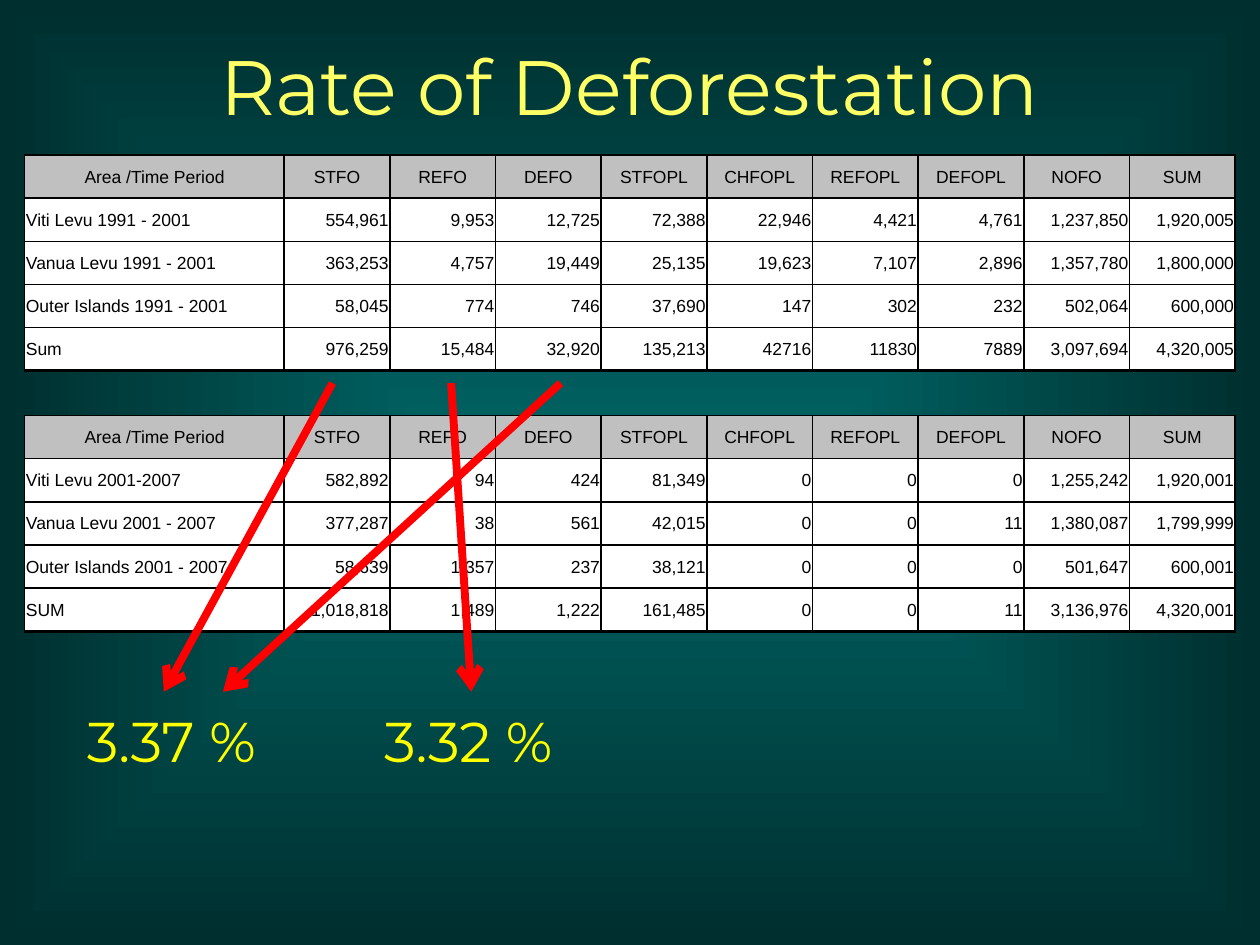
from lxml import etree
from pptx import Presentation
from pptx.dml.color import RGBColor
from pptx.enum.shapes import MSO_CONNECTOR
from pptx.enum.text import MSO_ANCHOR, MSO_AUTO_SIZE, PP_ALIGN
from pptx.oxml.ns import qn
from pptx.util import Pt

LEFT, CENTER, RIGHT = PP_ALIGN.LEFT, PP_ALIGN.CENTER, PP_ALIGN.RIGHT
TOP, MIDDLE = MSO_ANCHOR.TOP, MSO_ANCHOR.MIDDLE
STRAIGHT = MSO_CONNECTOR.STRAIGHT
FIT_SHAPE = MSO_AUTO_SIZE.SHAPE_TO_FIT_TEXT

COLORS = {
    "glow": "006666", "edge": "002F2F", "title": "FFFF66", "rate": "FFFF00",
    "arrow": "FF0000", "header": "C0C0C0", "body": "FFFFFF", "ink": "000000",
}
HEADER = ["Area /Time Period", "STFO", "REFO", "DEFO", "STFOPL", "CHFOPL",
          "REFOPL", "DEFOPL", "NOFO", "SUM"]
FIRST_PERIOD = [
    ["Viti Levu 1991 - 2001", "554,961", "9,953", "12,725", "72,388", "22,946",
     "4,421", "4,761", "1,237,850", "1,920,005"],
    ["Vanua Levu 1991 - 2001", "363,253", "4,757", "19,449", "25,135", "19,623",
     "7,107", "2,896", "1,357,780", "1,800,000"],
    ["Outer Islands 1991 - 2001", "58,045", "774", "746", "37,690", "147",
     "302", "232", "502,064", "600,000"],
    ["Sum", "976,259", "15,484", "32,920", "135,213", "42716",
     "11830", "7889", "3,097,694", "4,320,005"],
]
SECOND_PERIOD = [
    ["Viti Levu 2001-2007", "582,892", "94", "424", "81,349", "0",
     "0", "0", "1,255,242", "1,920,001"],
    ["Vanua Levu 2001 - 2007", "377,287", "38", "561", "42,015", "0",
     "0", "11", "1,380,087", "1,799,999"],
    ["Outer Islands 2001 - 2007", "58,639", "1,357", "237", "38,121", "0",
     "0", "0", "501,647", "600,001"],
    ["SUM", "1,018,818", "1,489", "1,222", "161,485", "0",
     "0", "11", "3,136,976", "4,320,001"],
]
GAP = [""] * len(HEADER)
ROWS = [HEADER, *FIRST_PERIOD, GAP, HEADER, *SECOND_PERIOD]
LABEL_WIDTH, VALUE_WIDTH = 148.3, 60.4
ROW_HEIGHT, GAP_HEIGHT = 24.65, 25.7


class SlideBuilder:
    """Keeps the style and the slide being filled."""

    heading_font = "Montserrat"
    table_font = "Arial"
    cell_margins = {"margin_left": Pt(0.75), "margin_right": Pt(0.75),
                    "margin_top": Pt(0.75), "margin_bottom": Pt(0),
                    "vertical_anchor": MIDDLE}

    def __init__(self, slide):
        self.slide = slide

    def color(self, name):
        return RGBColor.from_string(COLORS[name])

    def background(self, inner, outer):
        fill = self.slide.background.fill
        fill.gradient()
        for stop, name, position in zip(fill.gradient_stops, (inner, outer), (0, 1)):
            stop.color.rgb = self.color(name)
            stop.position = position
        gradient = self.slide.element.xpath(".//a:gradFill")[0]
        for linear in gradient.findall(qn("a:lin")):
            gradient.remove(linear)
        shading = etree.SubElement(gradient, qn("a:path"), path="shape")
        center = dict.fromkeys("ltrb", "50000")
        etree.SubElement(shading, qn("a:fillToRect"), center)

    def add_words(self, paragraph, text, font, size, color, align):
        paragraph.alignment = align
        run = paragraph.add_run()
        run.text = text
        for name, value in {"name": font, "size": Pt(size)}.items():
            setattr(run.font, name, value)
        run.font.color.rgb = self.color(color)

    def text(self, box, text, size, color, align=LEFT, anchor=TOP, wrap=False):
        frame = self.slide.shapes.add_textbox(*map(Pt, box)).text_frame
        settings = {"word_wrap": wrap, "vertical_anchor": anchor}
        if not wrap:
            settings["auto_size"] = FIT_SHAPE
        for name, value in settings.items():
            setattr(frame, name, value)
        self.add_words(frame.paragraphs[0], text, self.heading_font, size, color, align)

    def borders(self, cell, widths):
        """Draw left, right, top and bottom lines; width 0 means none."""
        properties = cell._tc.get_or_add_tcPr()
        for index, (side, width) in enumerate(zip("LRTB", widths)):
            line = etree.Element(qn(f"a:ln{side}"), w=str(Pt(width)))
            if width:
                solid = etree.SubElement(line, qn("a:solidFill"))
                etree.SubElement(solid, qn("a:srgbClr"), val=COLORS["ink"])
            else:
                etree.SubElement(line, qn("a:noFill"))
            properties.insert(index, line)

    def cell(self, cell, text, fill, align, widths):
        for name, value in self.cell_margins.items():
            setattr(cell, name, value)
        if fill:
            cell.fill.solid()
            cell.fill.fore_color.rgb = self.color(fill)
            self.add_words(cell.text_frame.paragraphs[0], text, self.table_font, 10,
                           "ink", align)
        else:
            cell.fill.background()
        self.borders(cell, widths)

    def table(self, left, top, rows):
        columns = len(rows[0])
        widths = [LABEL_WIDTH] + [VALUE_WIDTH] * (columns - 1)
        heights = [GAP_HEIGHT if row is GAP else ROW_HEIGHT for row in rows]
        box = map(Pt, (left, top, sum(widths), sum(heights)))
        table = self.slide.shapes.add_table(len(rows), columns, *box).table
        table.first_row = table.horz_banding = False
        for column, width in zip(table.columns, widths):
            column.width = Pt(width)
        for row_index, (row, height) in enumerate(zip(rows, heights)):
            table.rows[row_index].height = Pt(height)
            is_sum = row[0].upper() == "SUM"
            lines = (0, 0, 2, 1) if row is GAP else (1, 1, 1, 2 if is_sum else 1)
            fill = {id(GAP): None, id(HEADER): "header"}.get(id(row), "body")
            for column_index, text in enumerate(row):
                align = LEFT if column_index == 0 else RIGHT
                if row is HEADER:
                    align = CENTER
                self.cell(table.cell(row_index, column_index), text, fill, align, lines)

    def arrow(self, start, end):
        connector = self.slide.shapes.add_connector(STRAIGHT, *map(Pt, start + end))
        connector.line.width = Pt(4.5)
        connector.line.color.rgb = self.color("arrow")
        line = connector.line._get_or_add_ln()
        etree.SubElement(line, qn("a:tailEnd"), type="arrow")
        etree.SubElement(connector._element.spPr, qn("a:effectLst"))


def main():
    presentation = Presentation()
    presentation.slide_width, presentation.slide_height = Pt(720), Pt(540)
    slide = presentation.slides.add_slide(presentation.slide_layouts[6])
    builder = SlideBuilder(slide)
    builder.background("glow", "edge")

    # Title
    builder.text((36, 3.6, 648, 90), "Rate of Deforestation", 44, "title",
                 CENTER, MIDDLE, wrap=True)

    # Both periods in one table
    builder.table(14.1, 88.6, ROWS)

    # Yearly rates
    for left, rate in ((42.5, "3.37 %"), (212.4, "3.32 %")):
        builder.text((left, 400.3, 133.2, 46), rate, 32, "rate")

    # Arrows from the sums to the rates
    for start_x, end_x in ((190, 93.6), (320.4, 127.4), (257.8, 269.3)):
        builder.arrow((start_x, 218.9), (end_x, 395.3))

    presentation.save("out.pptx")


if __name__ == "__main__":
    main()
